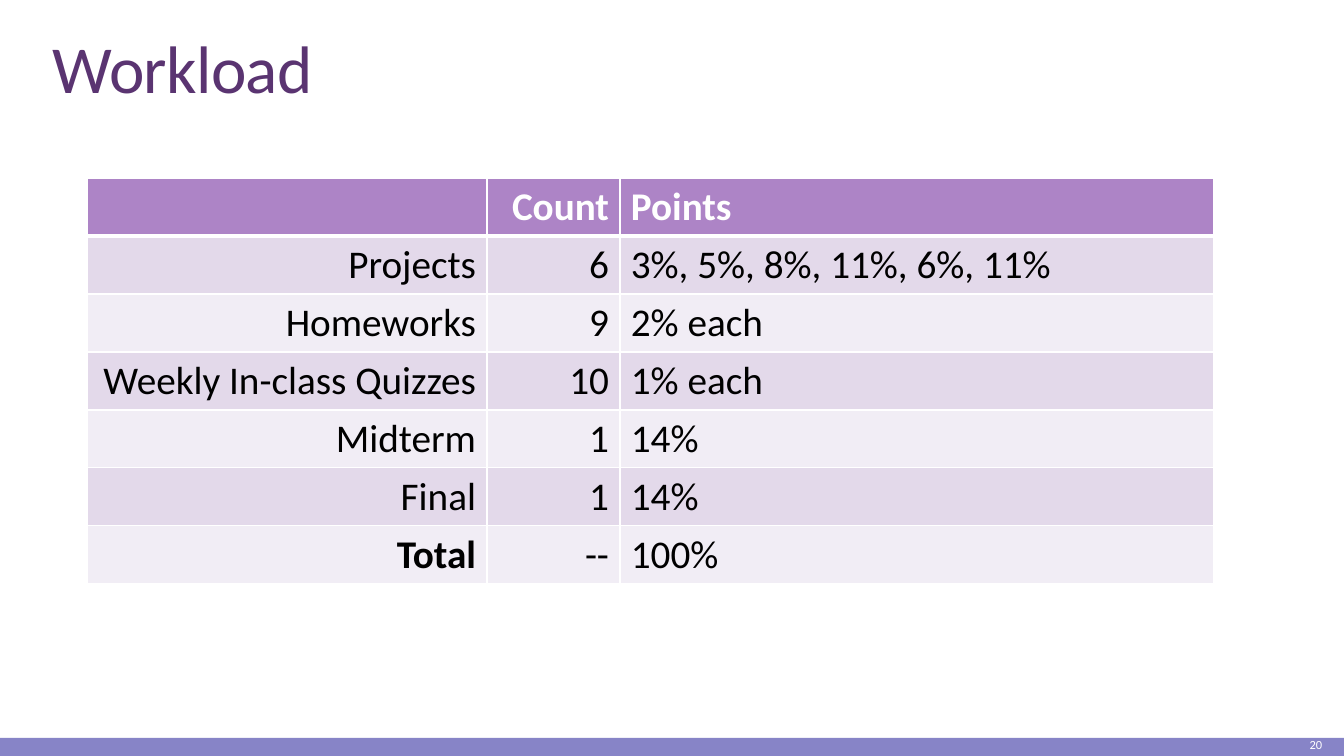
"""Build the course workload slide."""
from dataclasses import dataclass
from typing import NamedTuple

from lxml import etree
from pptx import Presentation
from pptx.dml.color import RGBColor
from pptx.enum.shapes import MSO_SHAPE
from pptx.enum.text import MSO_ANCHOR, PP_ALIGN
from pptx.oxml.ns import qn
from pptx.util import Emu, Pt

LEFT, RIGHT = PP_ALIGN.LEFT, PP_ALIGN.RIGHT
MIDDLE, BOTTOM = MSO_ANCHOR.MIDDLE, MSO_ANCHOR.BOTTOM
RECT = MSO_SHAPE.RECTANGLE
SCALE = 914400 / 100.8


@dataclass(frozen=True)
class Theme:
    font: str = "Calibri"
    title: str = "5A3471"
    bar: str = "8784C7"
    head: str = "AD84C6"
    bands: tuple[str, str] = ("E3D9EA", "F1EDF5")
    white: str = "FFFFFF"
    black: str = "000000"
    big: float = 48
    body: float = 28
    small: float = 8.9


class Box(NamedTuple):
    x: int
    y: int
    w: int
    h: int


class Label(NamedTuple):
    text: str
    box: Box
    size: float
    color: str
    align: PP_ALIGN
    anchor: MSO_ANCHOR
    lead: float = 1.0
    track: int = 0


class Row(NamedTuple):
    name: str
    count: str
    points: str


THEME = Theme()
PAGE = Box(0, 0, 1344, 756)
BAR = Box(0, 738, 1344, 18)
LABELS = [
    Label("Workload", Box(43, 31, 1274, 81), THEME.big, THEME.title,
          LEFT, BOTTOM, 0.85, -50),
    Label("20", Box(1188, 734, 144, 22), THEME.small, THEME.white,
          RIGHT, MIDDLE),
]
ROWS = [
    Row("", "Count", "Points"),
    Row("Projects", "6", "3%, 5%, 8%, 11%, 6%, 11%"),
    Row("Homeworks", "9", "2% each"),
    Row("Weekly In-class Quizzes", "10", "1% each"),
    Row("Midterm", "1", "14%"),
    Row("Final", "1", "14%"),
    Row("Total", "--", "100%"),
]
WIDTHS = (400, 133, 594)
ALIGNS = (RIGHT, RIGHT, LEFT)
STEP = 58
GRID = Box(87, 178, sum(WIDTHS), STEP * len(ROWS))


def px(n: int) -> Emu:
    return Emu(round(n * SCALE))


def place(box: Box) -> list[Emu]:
    return [px(n) for n in box]


def style(para, size: float, color: str, align: PP_ALIGN, bold: bool = False) -> None:
    para.alignment = align
    font = para.font
    font.name, font.size, font.bold = THEME.font, Pt(size), bold
    font.color.rgb = RGBColor.from_string(color)


def add_bar(slide) -> None:
    bar = slide.shapes.add_shape(RECT, *place(BAR))
    bar.shadow.inherit = False
    bar.fill.solid()
    bar.fill.fore_color.rgb = RGBColor.from_string(THEME.bar)
    bar.line.fill.background()


def add_label(slide, label: Label) -> None:
    frame = slide.shapes.add_textbox(*place(label.box)).text_frame
    frame.word_wrap = True
    frame.vertical_anchor = label.anchor
    para = frame.paragraphs[0]
    run = para.add_run()
    run.text = label.text
    para.line_spacing = label.lead
    style(para, label.size, label.color, label.align)
    if label.track:
        run.font.bold = False
        run.font._element.set("spc", str(label.track))


def edge(cell, row: int) -> None:
    props = cell._tc.get_or_add_tcPr()
    heavy = {0: "lnB", 1: "lnT"}.get(row)
    for i, side in enumerate(("lnL", "lnR", "lnT", "lnB")):
        line = etree.Element(qn(f"a:{side}"), w=str(Pt(3 if side == heavy else 1)))
        fill = etree.SubElement(line, qn("a:solidFill"))
        etree.SubElement(fill, qn("a:srgbClr"), val=THEME.white)
        props.insert(i, line)


def add_grid(slide) -> None:
    table = slide.shapes.add_table(len(ROWS), len(WIDTHS), *place(GRID)).table
    for col, width in zip(table.columns, WIDTHS):
        col.width = px(width)
    for r, row in enumerate(ROWS):
        table.rows[r].height = px(STEP)
        head = r == 0
        shade = THEME.head if head else THEME.bands[(r - 1) % 2]
        color = THEME.white if head else THEME.black
        for c, text in enumerate(row):
            cell = table.cell(r, c)
            cell.fill.solid()
            cell.fill.fore_color.rgb = RGBColor.from_string(shade)
            edge(cell, r)
            cell.margin_left = cell.margin_right = px(11)
            cell.text = text
            bold = head or text == "Total"
            style(cell.text_frame.paragraphs[0], THEME.body, color, ALIGNS[c], bold)


def main() -> None:
    deck = Presentation()
    deck.slide_width, deck.slide_height = px(PAGE.w), px(PAGE.h)
    slide = deck.slides.add_slide(deck.slide_layouts[6])
    add_bar(slide)
    for label in LABELS:
        add_label(slide, label)
    add_grid(slide)
    deck.save("out.pptx")


if __name__ == "__main__":
    main()
